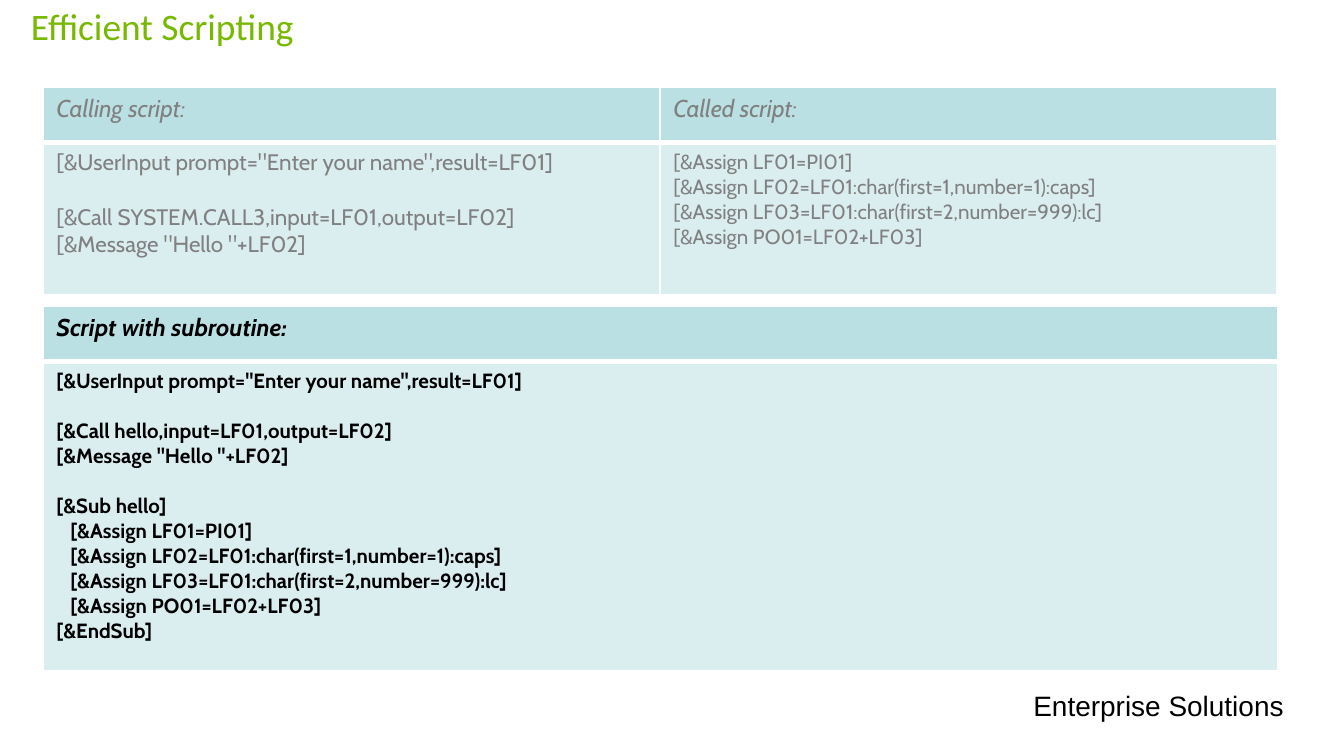
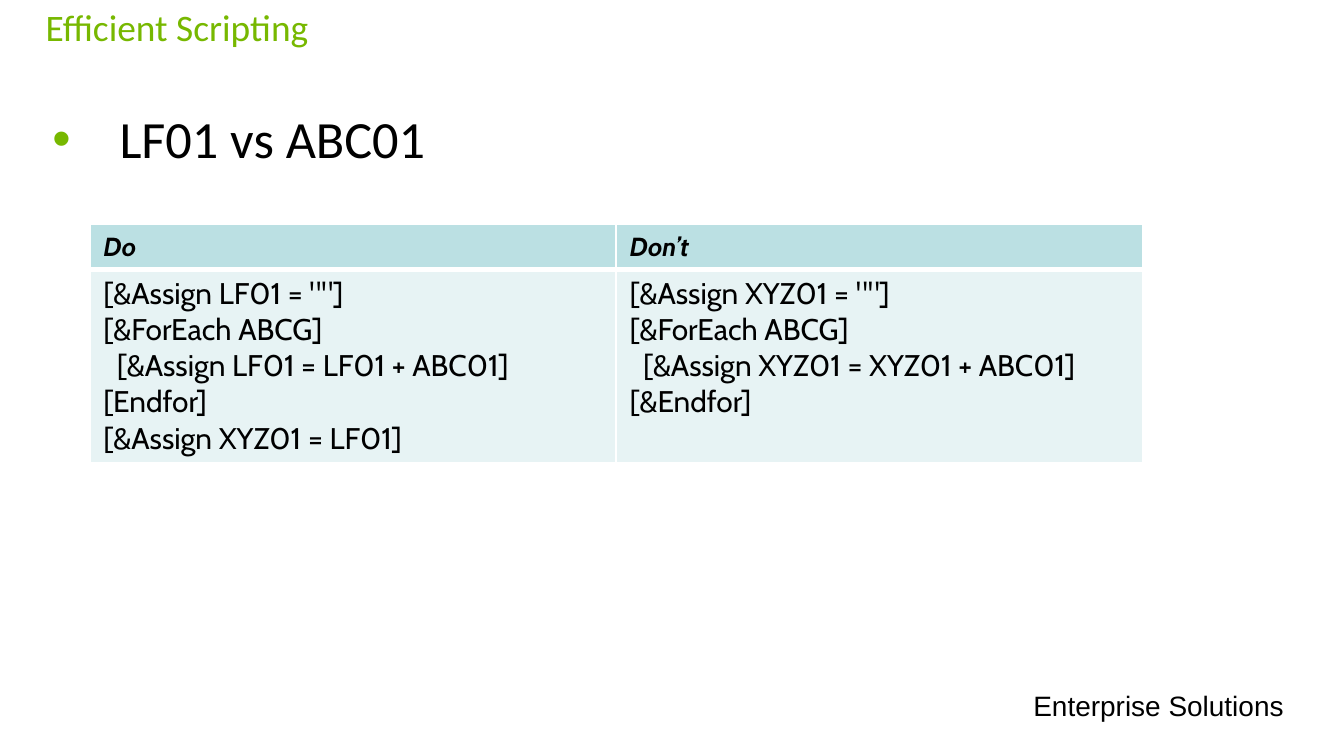
from dataclasses import dataclass

import lxml.etree
import pptx
import pptx.dml.color
import pptx.enum.text
import pptx.oxml.ns
import pptx.presentation
import pptx.slide
import pptx.table
import pptx.text.text
import pptx.util

COLOURS = {
    "green": "77B800",
    "black": "000000",
    "grey": "808080",
    "white": "FFFFFF",
    "header": "BBE0E3",
    "body": "DAEDEF",
    "pale": "E7F3F4",
}
HEADING_FONT, CODE_FONT, FOOTER_FONT = "Calibri", "Cabin", "Arial"
CODE_LINE = 1.22  # line height of the code font, in ems
COLUMNS, ROWS = 100, 56.25
STEP = pptx.util.Inches(10) / COLUMNS  # grid columns and rows are equally wide
THIN, THICK = 1, 3


@dataclass(frozen=True)
class Frame:
    """A place on the slide, in grid columns and rows."""
    left: float
    top: float
    width: float
    height: float

    def lengths(self) -> tuple[int, ...]:
        return tuple(grid(n) for n in (self.left, self.top, self.width, self.height))


@dataclass(frozen=True)
class Script:
    heading: str
    code: str
    size: int


@dataclass(frozen=True)
class ScriptTable:
    """Scripts side by side, each under its heading."""
    frame: Frame
    header_rows: float
    scripts: tuple[Script, ...]
    heading_size: int = 13
    text_colour: str = "black"
    body_colour: str = "body"
    bold_heading: bool = True
    bold_code: bool = False


FOOTER_FRAME = Frame(75.9, 50.75, 25.8, 3.5)
BULLET_FRAME = Frame(3.1, 6.6, 91.8, 42.9)

CALLS = ScriptTable(
    Frame(3.2, 6.5, 91.8, 15.4), 4.1, text_colour="grey", bold_heading=False,
    scripts=(
        Script("Calling script:", """\
[&UserInput prompt="Enter your name",result=LF01]

[&Call SYSTEM.CALL3,input=LF01,output=LF02]
[&Message "Hello "+LF02]""", 12),
        Script("Called script:", """\
[&Assign LF01=PI01]
[&Assign LF02=LF01:char(first=1,number=1):caps]
[&Assign LF03=LF01:char(first=2,number=999):lc]
[&Assign PO01=LF02+LF03]""", 11),
    ))

SUBROUTINE = ScriptTable(
    Frame(3.2, 22.8, 91.9, 27.1), 4.1, bold_code=True,
    scripts=(
        Script("Script with subroutine:", """\
[&UserInput prompt="Enter your name",result=LF01]

[&Call hello,input=LF01,output=LF02]
[&Message "Hello "+LF02]

[&Sub hello]
   [&Assign LF01=PI01]
   [&Assign LF02=LF01:char(first=1,number=1):caps]
   [&Assign LF03=LF01:char(first=2,number=999):lc]
   [&Assign PO01=LF02+LF03]
[&EndSub]""", 11),
    ))

DO_AND_DONT = ScriptTable(
    Frame(6.7, 16.7, 78.3, 17.7), 3.3, heading_size=14, body_colour="pale",
    scripts=(
        Script("Do", """\
[&Assign LF01 = ""]
[&ForEach ABCG]
  [&Assign LF01 = LF01 + ABC01]
[Endfor]
[&Assign XYZ01 = LF01]""", 16),
        Script("Don’t", """\
[&Assign XYZ01 = ""]
[&ForEach ABCG]
  [&Assign XYZ01 = XYZ01 + ABC01]
[&Endfor]""", 16),
    ))


def grid(count: float) -> int:
    return round(count * STEP)


def rgb(name: str) -> pptx.dml.color.RGBColor:
    return pptx.dml.color.RGBColor.from_string(COLOURS[name])


def write_text(box: pptx.text.text.TextFrame, text: str, *, size: float, font: str,
               colour: str = "black", bold: bool = False,
               italic: bool = False) -> None:
    """Write one paragraph a line; an empty line becomes space before the next."""
    gap = 0.0
    para = box.paragraphs[0]
    for number, line in enumerate(text.split("\n")):
        if not line:
            gap += size * CODE_LINE
            continue
        if number:
            para = box.add_paragraph()
        if gap:
            para.space_before = pptx.util.Pt(round(gap, 1))
            gap = 0.0
        para.alignment = pptx.enum.text.PP_ALIGN.LEFT
        span = para.add_run()
        span.text = line
        span.font.size = pptx.util.Pt(size)
        span.font.name = font
        span.font.color.rgb = rgb(colour)
        span.font.bold = bold
        span.font.italic = italic


def set_insets(box: pptx.text.text.TextFrame, inset: float) -> None:
    box.margin_left = box.margin_right = grid(inset)
    box.margin_top = box.margin_bottom = grid(inset)


def add_element(parent: lxml.etree._Element, tag: str,
                **attributes: str) -> lxml.etree._Element:
    return lxml.etree.SubElement(parent, pptx.oxml.ns.qn(tag), attributes)


def add_title(page: pptx.slide.Slide, text: str, frame: Frame) -> None:
    title = page.shapes.title
    title.left, title.top, title.width, title.height = frame.lengths()
    box = title.text_frame
    box.word_wrap = True
    box.auto_size = pptx.enum.text.MSO_AUTO_SIZE.NONE
    box.vertical_anchor = pptx.enum.text.MSO_ANCHOR.BOTTOM
    set_insets(box, 0.3)
    write_text(box, text, size=20, font=HEADING_FONT, colour="green")


def add_footer(page: pptx.slide.Slide) -> None:
    box = page.shapes.add_textbox(*FOOTER_FRAME.lengths()).text_frame
    box.word_wrap = True
    write_text(box, "Enterprise Solutions", size=15, font=FOOTER_FONT)


def add_bullet(page: pptx.slide.Slide, text: str) -> None:
    box = page.shapes.add_textbox(*BULLET_FRAME.lengths()).text_frame
    box.word_wrap = True
    set_insets(box, 0.3)
    box.margin_top = grid(0.4)
    para = box.paragraphs[0]
    properties = para._p.get_or_add_pPr()
    properties.set("marL", str(grid(5.5)))
    properties.set("indent", str(grid(-5)))
    colour = add_element(properties, "a:buClr")
    add_element(colour, "a:srgbClr", val=COLOURS["green"])
    add_element(properties, "a:buFont", typeface="Arial")
    add_element(properties, "a:buChar", char="•")
    para.line_spacing = 1.2
    write_text(box, text, size=28, font=HEADING_FONT)


def format_cell(cell: pptx.table._Cell, fill: str, top: int, bottom: int) -> None:
    """Fill a cell and give it white borders, widths in points."""
    properties = cell._tc.get_or_add_tcPr()
    for side, width in zip("LRTB", (THIN, THIN, top, bottom)):
        line = add_element(properties, f"a:ln{side}", w=str(pptx.util.Pt(width)))
        solid = add_element(line, "a:solidFill")
        add_element(solid, "a:srgbClr", val=COLOURS["white"])
    cell.fill.solid()
    cell.fill.fore_color.rgb = rgb(fill)


def add_script_table(page: pptx.slide.Slide, content: ScriptTable) -> None:
    frame, scripts = content.frame, content.scripts
    table = page.shapes.add_table(2, len(scripts), *frame.lengths()).table
    table.first_row = table.horz_banding = False
    table.rows[0].height = grid(content.header_rows)
    table.rows[1].height = grid(frame.height - content.header_rows)
    for column, script in enumerate(scripts):
        table.columns[column].width = grid(frame.width / len(scripts))
        header, body = table.cell(0, column), table.cell(1, column)
        format_cell(header, "header", THIN, THICK)
        format_cell(body, content.body_colour, THICK, THIN)
        write_text(header.text_frame, script.heading, size=content.heading_size,
                   font=CODE_FONT, colour=content.text_colour,
                   bold=content.bold_heading, italic=True)
        write_text(body.text_frame, script.code, size=script.size, font=CODE_FONT,
                   colour=content.text_colour, bold=content.bold_code)


def add_page(deck: pptx.presentation.Presentation,
             title_frame: Frame) -> pptx.slide.Slide:
    page = deck.slides.add_slide(deck.slide_layouts.get_by_name("Title Only"))
    add_title(page, "Efficient Scripting", title_frame)
    add_footer(page)
    return page


def main() -> None:
    deck = pptx.Presentation()
    deck.slide_width, deck.slide_height = grid(COLUMNS), grid(ROWS)

    subroutine_page = add_page(deck, Frame(2, 0.75, 75.4, 3.1))
    add_script_table(subroutine_page, CALLS)
    add_script_table(subroutine_page, SUBROUTINE)

    variable_page = add_page(deck, Frame(3.1, 0.85, 75.4, 3.1))
    add_bullet(variable_page, "LF01 vs ABC01")
    add_script_table(variable_page, DO_AND_DONT)

    deck.save("out.pptx")


if __name__ == "__main__":
    main()
